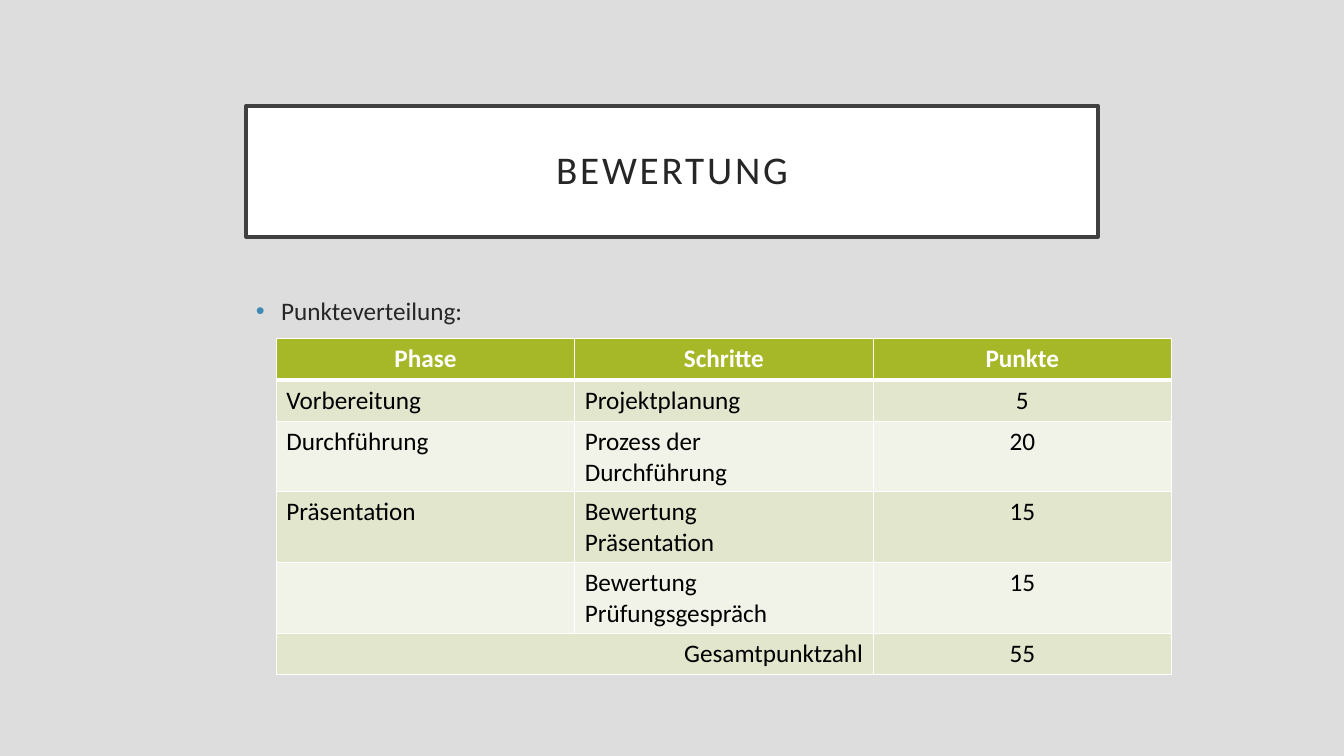
"""Build the slide showing how points are distributed in the assessment."""
from dataclasses import dataclass

from lxml import etree
from pptx import Presentation
from pptx import util as u
from pptx.dml.color import RGBColor
from pptx.enum import shapes, text
from pptx.oxml import ns

BACKGROUND = RGBColor(0xDD, 0xDD, 0xDD)
WHITE = RGBColor(0xFF, 0xFF, 0xFF)
BLACK = RGBColor(0x00, 0x00, 0x00)
FRAME = RGBColor(0x40, 0x40, 0x40)
INK = RGBColor(0x26, 0x26, 0x26)
BULLET = RGBColor(0x41, 0x8A, 0xB3)
HEADER = RGBColor(0xA6, 0xB7, 0x27)
BANDS = (RGBColor(0xF1, 0xF3, 0xE8), RGBColor(0xE1, 0xE6, 0xCD))

LEFT, CENTER, RIGHT = text.PP_ALIGN.LEFT, text.PP_ALIGN.CENTER, text.PP_ALIGN.RIGHT
COLUMN_WIDTH = 2.96
ROW_HEIGHT = 0.41


@dataclass(frozen=True)
class Row:
    phase: str
    step: str
    points: str
    total: bool = False


ROWS = (
    Row("Phase", "Schritte", "Punkte"),
    Row("Vorbereitung", "Projektplanung", "5"),
    Row("Durchführung", "Prozess der\nDurchführung", "20"),
    Row("Präsentation", "Bewertung\nPräsentation", "15"),
    Row("", "Bewertung Prüfungsgespräch", "15"),
    Row("Gesamtpunktzahl", "", "55", total=True),
)


def add_span(para, content: str, color: RGBColor, size: int = 18, bold: bool = False):
    """Add one formatted run to a paragraph."""
    span = para.add_run()
    span.text = content
    span.font.name = "Calibri"
    span.font.size = u.Pt(size)
    span.font.bold = bold
    span.font.color.rgb = color
    return span


def add_title(page) -> None:
    """Add the framed title."""
    box = page.shapes.add_shape(shapes.MSO_SHAPE.RECTANGLE, u.Inches(2.44), u.Inches(1.05),
                                u.Inches(8.45), u.Inches(1.3))
    box.shadow.inherit = False
    box.fill.solid()
    box.fill.fore_color.rgb = WHITE
    box.line.color.rgb = FRAME
    box.line.width = u.Pt(2.5)
    frame = box.text_frame
    frame.word_wrap = True
    frame.vertical_anchor = text.MSO_ANCHOR.MIDDLE
    frame.margin_left = frame.margin_right = u.Inches(0.2)
    frame.margin_top = frame.margin_bottom = u.Inches(0.2)
    para = frame.paragraphs[0]
    para.alignment = CENTER
    para.line_spacing = 0.9
    span = add_span(para, "BEWERTUNG", INK, size=28)
    span.font._element.set("spc", "200")


def add_body(page) -> None:
    """Add the bulleted lead-in."""
    box = page.shapes.add_textbox(u.Inches(2.44), u.Inches(2.88), u.Inches(8.45), u.Inches(3.39))
    box.text_frame.word_wrap = True
    para = box.text_frame.paragraphs[0]
    para.space_before = u.Pt(10)
    props = para._p.get_or_add_pPr()
    props.set("marL", str(u.Inches(0.25)))
    props.set("indent", str(-u.Inches(0.25)))
    color = etree.SubElement(props, ns.qn("a:buClr"))
    etree.SubElement(color, ns.qn("a:srgbClr"), val=str(BULLET))
    etree.SubElement(props, ns.qn("a:buFont"), typeface="Arial")
    etree.SubElement(props, ns.qn("a:buChar"), char="•")
    add_span(para, "Punkteverteilung:", INK)


def set_borders(cell, top: float, bottom: float) -> None:
    """Draw white borders around a cell."""
    props = cell._tc.get_or_add_tcPr()
    for side, width in (("L", 1), ("R", 1), ("T", top), ("B", bottom)):
        line = etree.SubElement(props, ns.qn(f"a:ln{side}"), w=str(u.Pt(width)))
        fill = etree.SubElement(line, ns.qn("a:solidFill"))
        etree.SubElement(fill, ns.qn("a:srgbClr"), val=str(WHITE))


def fill_cell(cell, content: str, row: int, align) -> None:
    """Give a cell its borders, fill and text."""
    header = row == 0
    set_borders(cell, top=3 if row == 1 else 1, bottom=3 if header else 1)
    cell.fill.solid()
    cell.fill.fore_color.rgb = HEADER if header else BANDS[row % 2]
    if not content:
        return
    frame = cell.text_frame
    for index, line in enumerate(content.split("\n")):
        para = frame.add_paragraph() if index else frame.paragraphs[0]
        para.alignment = align
        add_span(para, line, WHITE if header else BLACK, bold=header)


def add_points_table(page) -> None:
    """Add the table of phases, steps and points."""
    table = page.shapes.add_table(len(ROWS), 3, u.Inches(2.74), u.Inches(3.36),
                                  u.Inches(3 * COLUMN_WIDTH),
                                  u.Inches(len(ROWS) * ROW_HEIGHT)).table
    for column in table.columns:
        column.width = u.Inches(COLUMN_WIDTH)
    for index, row in enumerate(ROWS):
        table.rows[index].height = u.Inches(ROW_HEIGHT)
        if row.total:
            table.cell(index, 0).merge(table.cell(index, 1))
        label_align = CENTER if index == 0 else RIGHT if row.total else LEFT
        aligns = (label_align, label_align, CENTER)
        for column, content in enumerate((row.phase, row.step, row.points)):
            fill_cell(table.cell(index, column), content, index, aligns[column])


def main() -> None:
    """Assemble and save the deck."""
    deck = Presentation()
    deck.slide_width = u.Inches(13.33)
    deck.slide_height = u.Inches(7.5)
    page = deck.slides.add_slide(deck.slide_layouts[6])
    page.background.fill.solid()
    page.background.fill.fore_color.rgb = BACKGROUND
    add_title(page)
    add_body(page)
    add_points_table(page)
    deck.save("out.pptx")


if __name__ == "__main__":
    main()
